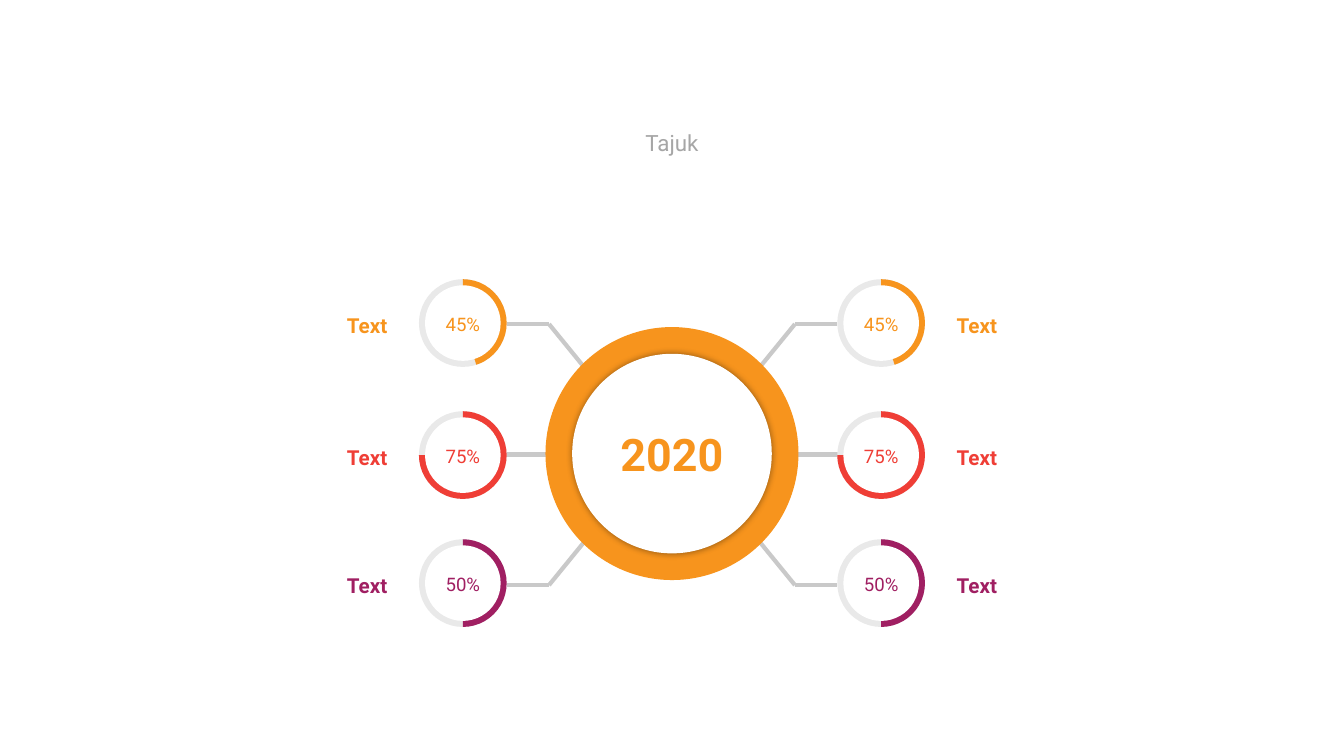
from lxml import etree
from pptx import Presentation
from pptx import util as u
from pptx.dml.color import RGBColor
from pptx.enum import shapes, text
from pptx.oxml.ns import qn

# Grid: cells of a tenth of an inch; elements are placed by their centre
COLUMNS, ROWS = 133.33, 75
CENTRE, HUB_ROW, SPOKE_ROW = COLUMNS / 2, 45, 45.1
COLORS = {"orange": "F7941D", "red": "EF3E36", "purple": "A01F62",
          "track": "E9E9E9", "spoke": "C9C9C9", "title": "A6A6A6",
          "white": "FFFFFF", "black": "000000"}
FONT = "Roboto"
# Percentage, colour and centre row of each ring
RINGS = [(45, "orange", 32.05), (75, "red", 45.15), (50, "purple", 57.85)]


def write(frame, content, size, color, bold=False, align=text.PP_ALIGN.CENTER,
          spacing=None, wrap=False, fit=text.MSO_AUTO_SIZE.SHAPE_TO_FIT_TEXT):
    frame.word_wrap = wrap
    frame.auto_size = fit
    frame.vertical_anchor = text.MSO_ANCHOR.MIDDLE
    paragraph = frame.paragraphs[0]
    paragraph.alignment = align
    if spacing:
        paragraph.line_spacing = spacing
    run = paragraph.add_run()
    run.text = content
    run.font.name, run.font.size, run.font.bold = FONT, u.Pt(size), bold
    run.font.color.rgb = RGBColor.from_string(COLORS[color])


class Canvas:
    def __init__(self, presentation):
        self.presentation = presentation
        self.slide = presentation.slides.add_slide(presentation.slide_layouts[5])

    def x(self, columns):
        return round(self.presentation.slide_width * columns / COLUMNS)

    def y(self, rows):
        return round(self.presentation.slide_height * rows / ROWS)

    def box(self, column, row, width, height):
        return (self.x(column - width / 2), self.y(row - height / 2),
                self.x(width), self.y(height))

    def title(self, content, box, **style):
        shape = self.slide.shapes.title
        shape.left, shape.top, shape.width, shape.height = self.box(*box)
        frame = shape.text_frame
        frame.margin_left = frame.margin_right = 0
        frame.margin_top = frame.margin_bottom = 0
        write(frame, content, fit=text.MSO_AUTO_SIZE.NONE, **style)

    def label(self, content, box, **style):
        shape = self.slide.shapes.add_textbox(*self.box(*box))
        write(shape.text_frame, content, **style)

    def disc(self, column, row, size, color, kind=shapes.MSO_SHAPE.OVAL):
        shape = self.slide.shapes.add_shape(kind, *self.box(column, row, size, size))
        shape.shadow.inherit = False
        shape.fill.solid()
        shape.fill.fore_color.rgb = RGBColor.from_string(COLORS[color])
        shape.line.fill.background()
        return shape

    def glow(self, shape, color, blur, opacity):
        effects = shape.element.spPr.find(qn("a:effectLst"))
        shadow = etree.SubElement(effects, qn("a:outerShdw"), blurRad=str(u.Pt(blur)),
                                  dist="0", dir="0", algn="ctr", rotWithShape="0")
        tint = etree.SubElement(shadow, qn("a:srgbClr"), val=COLORS[color])
        etree.SubElement(tint, qn("a:alpha"), val=str(opacity * 1000))

    def spoke(self, start, end):
        line = self.slide.shapes.add_connector(
            shapes.MSO_CONNECTOR.STRAIGHT, self.x(start[0]), self.y(start[1]),
            self.x(end[0]), self.y(end[1]))
        line.line.width = u.Pt(3)
        line.line.color.rgb = RGBColor.from_string(COLORS["spoke"])
        etree.SubElement(line.element.spPr, qn("a:effectLst"))

    def ring(self, column, row, percent, color):
        self.disc(column, row, 8.7, "track")
        wedge = self.disc(column, row, 8.7, color, shapes.MSO_SHAPE.PIE)
        # Angles run clockwise from three o'clock; one degree is 0.6 units
        wedge.adjustments[0] = 270 * 0.6
        wedge.adjustments[1] = (270 + percent * 3.6) % 360 * 0.6
        self.disc(column, row, 7.5, "white")
        self.label(f"{percent}%", (column, row + 0.1, 5.5, 3.3), size=13.3, color=color)


def main():
    presentation = Presentation()
    presentation.slide_width, presentation.slide_height = u.Inches(13.333), u.Inches(7.5)
    canvas = Canvas(presentation)
    canvas.title("Tajuk", (CENTRE, 14.15, 122, 2.5), size=16, color="title")

    # Two mirrored sides: spokes, rings and labels
    for side, align in ((1, text.PP_ALIGN.LEFT), (-1, text.PP_ALIGN.RIGHT)):
        canvas.spoke((CENTRE + side * 10.9, SPOKE_ROW), (CENTRE + side * 16.7, SPOKE_ROW))
        for direction in (1, -1):
            outer_row = SPOKE_ROW + direction * 12.95
            bend = (CENTRE + side * 12.2, outer_row)
            canvas.spoke((CENTRE + side * 8, SPOKE_ROW + direction * 7.8), bend)
            canvas.spoke(bend, (CENTRE + side * 16.4, outer_row))
        for percent, color, row in RINGS:
            canvas.ring(CENTRE + side * 20.75, row, percent, color)
            canvas.label("Text", (CENTRE + side * 44, row, 33.5, 3.7), size=14.7,
                         color=color, bold=True, align=align, spacing=1.2, wrap=True)

    # Hub with the year
    canvas.disc(CENTRE, HUB_ROW, 25.1, "orange")
    face = canvas.disc(CENTRE, HUB_ROW, 19.8, "white")
    canvas.glow(face, "black", blur=5, opacity=40)
    canvas.label("2020", (CENTRE, HUB_ROW, 12.3, 6.4), size=32, color="orange", bold=True)

    presentation.save("out.pptx")


if __name__ == "__main__":
    main()
